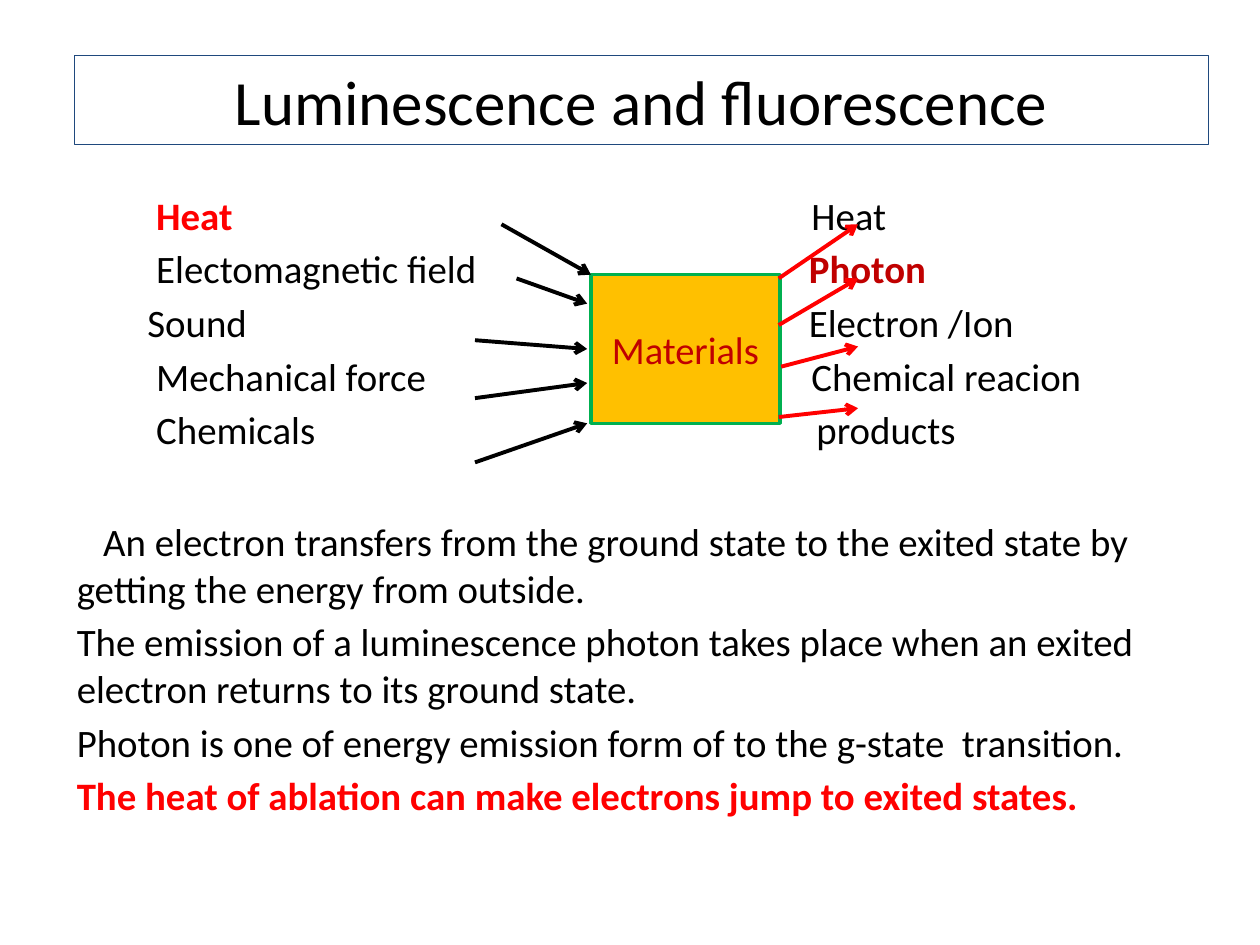
"""Build the slide on luminescence and fluorescence."""
from dataclasses import dataclass

import lxml.etree
import pptx
import pptx.dml.color
import pptx.enum.shapes
import pptx.enum.text
import pptx.oxml.ns
import pptx.util

Inches = pptx.util.Inches
Pt = pptx.util.Pt
RGBColor = pptx.dml.color.RGBColor
ALIGN = pptx.enum.text.PP_ALIGN
ANCHOR = pptx.enum.text.MSO_ANCHOR

BLACK = RGBColor(0x00, 0x00, 0x00)
RED = RGBColor(0xFF, 0x00, 0x00)
CRIMSON = RGBColor(0xC0, 0x00, 0x00)
NAVY = RGBColor(0x1F, 0x49, 0x7D)
GREEN = RGBColor(0x00, 0xB0, 0x50)
AMBER = RGBColor(0xFF, 0xC0, 0x00)


@dataclass(frozen=True)
class Line:
    text: str
    indent: float = 0
    color: RGBColor = BLACK
    bold: bool = False


@dataclass(frozen=True)
class Block:
    left: float
    top: float
    width: float
    height: float
    lines: tuple[Line, ...]


@dataclass(frozen=True)
class Arrow:
    start: tuple[float, float]
    end: tuple[float, float]
    color: RGBColor


BLOCKS = (
    Block(1.17, 1.52, 3, 2.2, (
        Line("Heat", 0.07, RED, True),
        Line("Electomagnetic field", 0.07),
        Line("Sound"),
        Line("Mechanical force", 0.07),
        Line("Chemicals", 0.07),
    )),
    Block(6.42, 1.52, 3, 2.2, (
        Line("Heat", 0.02),
        Line("Photon", 0, CRIMSON, True),
        Line("Electron /Ion"),
        Line("Chemical reacion", 0.02),
        Line("products", 0.06),
    )),
    Block(0.61, 4.11, 8.8, 2.65, (
        Line("An electron transfers from the ground state to the exited state "
             "by getting the energy from outside.", 0.21),
        Line("The emission of a luminescence photon takes place when an exited "
             "electron returns to its ground state."),
        Line("Photon is one of energy emission form of to the g-state  transition."),
        Line("The heat of ablation can make electrons jump to exited states.",
             0, RED, True),
    )),
)

INPUTS = (
    ((3.98, 1.78), (4.69, 2.18)),
    ((4.1, 2.21), (4.66, 2.41)),
    ((3.77, 2.7), (4.66, 2.77)),
    ((3.77, 3.16), (4.66, 3.04)),
    ((3.77, 3.67), (4.66, 3.36)),
)
OUTPUTS = (
    ((6.18, 2.21), (6.81, 1.78)),
    ((6.18, 2.58), (6.81, 2.21)),
    ((6.2, 2.91), (6.81, 2.75)),
    ((6.18, 3.31), (6.81, 3.24)),
)
ARROWS = [Arrow(*ends, BLACK) for ends in INPUTS] + [
    Arrow(*ends, RED) for ends in OUTPUTS]


def write(para, text: str, *, size: float, color: RGBColor = BLACK,
          bold: bool = False, align=ALIGN.LEFT, before: float = 0,
          indent: float = 0) -> None:
    para.alignment = align
    para.space_before = Pt(before)
    if indent:
        para._p.get_or_add_pPr().set("indent", str(Inches(indent)))
    run = para.add_run()
    run.text = text
    font = run.font
    font.name, font.size, font.bold = "Calibri", Pt(size), bold
    font.color.rgb = color


def add_block(slide, block: Block) -> None:
    box = slide.shapes.add_textbox(
        Inches(block.left), Inches(block.top),
        Inches(block.width), Inches(block.height))
    frame = box.text_frame
    frame.word_wrap = True
    frame.margin_left = frame.margin_right = 0
    frame.margin_top = frame.margin_bottom = 0
    for index, line in enumerate(block.lines):
        para = frame.add_paragraph() if index else frame.paragraphs[0]
        write(para, line.text, size=22.2, color=line.color, bold=line.bold,
              before=4 if index else 0, indent=line.indent)


def add_box(slide, left: float, top: float, width: float, height: float,
            edge: RGBColor, weight: float, fill: RGBColor | None = None):
    box = slide.shapes.add_shape(
        pptx.enum.shapes.MSO_SHAPE.RECTANGLE,
        Inches(left), Inches(top), Inches(width), Inches(height))
    box.shadow.inherit = False
    if fill is None:
        box.fill.background()
    else:
        box.fill.solid()
        box.fill.fore_color.rgb = fill
    box.line.color.rgb = edge
    box.line.width = Pt(weight)
    box.text_frame.word_wrap = True
    box.text_frame.vertical_anchor = ANCHOR.MIDDLE
    return box.text_frame.paragraphs[0]


def add_arrow(slide, arrow: Arrow) -> None:
    link = slide.shapes.add_connector(
        pptx.enum.shapes.MSO_CONNECTOR.STRAIGHT,
        *map(Inches, arrow.start + arrow.end))
    link.line.color.rgb = arrow.color
    link.line.width = Pt(2.25)
    qn = pptx.oxml.ns.qn
    lxml.etree.SubElement(link.line._get_or_add_ln(), qn("a:tailEnd"), type="arrow")
    lxml.etree.SubElement(link._element.spPr, qn("a:effectLst"))


def main() -> None:
    deck = pptx.Presentation()
    deck.slide_width, deck.slide_height = Inches(10), Inches(7.5)
    slide = deck.slides.add_slide(deck.slide_layouts[6])
    title = add_box(slide, 0.59, 0.44, 9, 0.71, NAVY, 0.75)
    write(title, "Luminescence and fluorescence", size=36, align=ALIGN.CENTER)
    for block in BLOCKS:
        add_block(slide, block)
    label = add_box(slide, 4.69, 2.18, 1.5, 1.18, GREEN, 2, AMBER)
    write(label, "Materials", size=22, color=CRIMSON, align=ALIGN.CENTER)
    for arrow in ARROWS:
        add_arrow(slide, arrow)
    deck.save("out.pptx")


if __name__ == "__main__":
    main()
